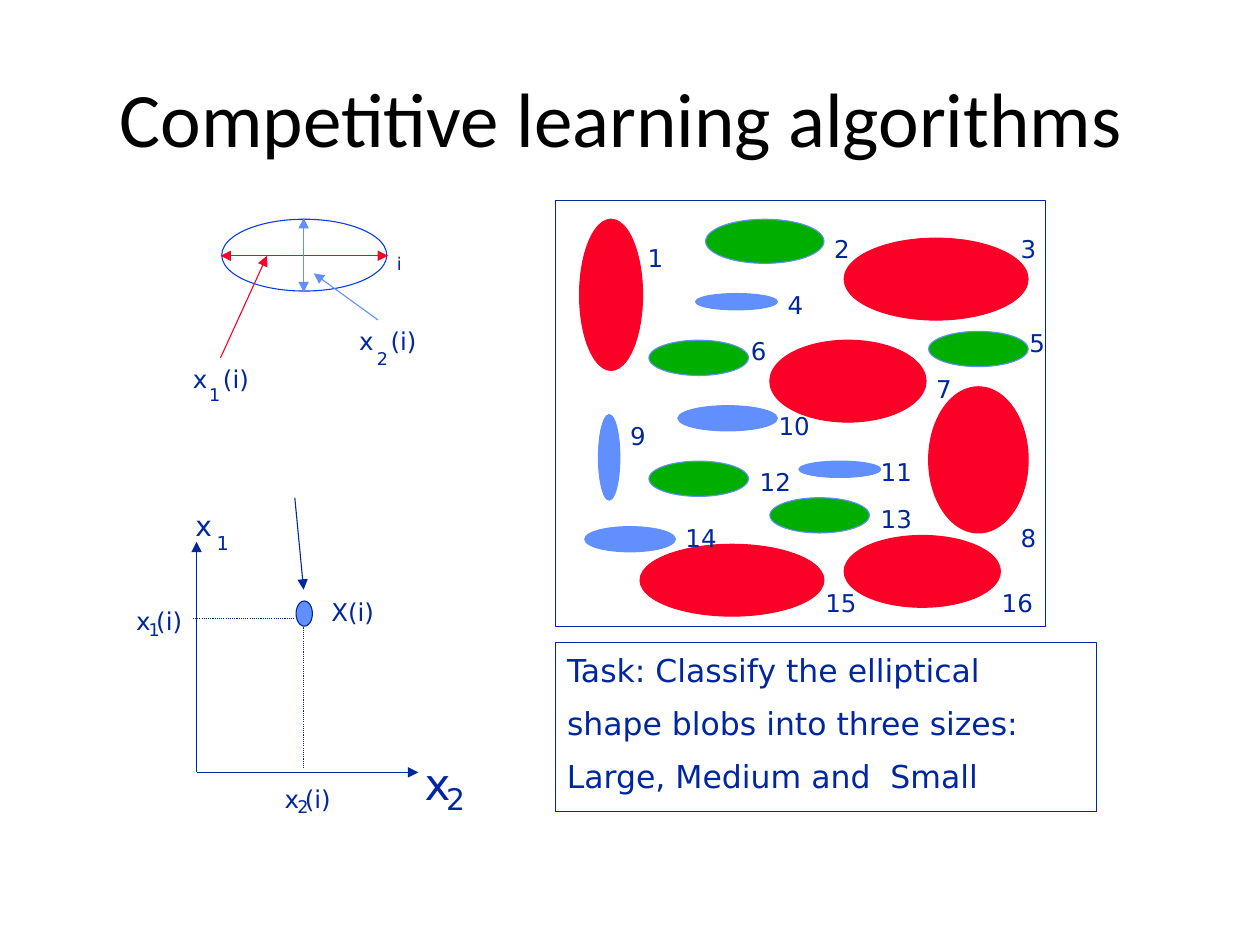
from dataclasses import dataclass

from lxml import etree
from pptx import Presentation
from pptx.dml.color import RGBColor
from pptx.enum.dml import MSO_LINE
from pptx.enum.shapes import MSO_CONNECTOR, MSO_SHAPE
from pptx.enum.text import MSO_ANCHOR, MSO_AUTO_SIZE, PP_ALIGN
from pptx.oxml.ns import qn
from pptx.util import Inches, Pt

OVAL = MSO_SHAPE.OVAL
RECTANGLE = MSO_SHAPE.RECTANGLE
STRAIGHT = MSO_CONNECTOR.STRAIGHT
DOTTED = MSO_LINE.ROUND_DOT
CENTER = PP_ALIGN.CENTER
MIDDLE = MSO_ANCHOR.MIDDLE
GROW = MSO_AUTO_SIZE.SHAPE_TO_FIT_TEXT


@dataclass(frozen=True)
class Theme:
    black: RGBColor = RGBColor(0x00, 0x00, 0x00)
    navy: RGBColor = RGBColor(0x00, 0x27, 0x9F)
    outline: RGBColor = RGBColor(0x06, 0x3D, 0xE8)
    red: RGBColor = RGBColor(0xFC, 0x01, 0x28)
    green: RGBColor = RGBColor(0x00, 0xAE, 0x00)
    blue: RGBColor = RGBColor(0x61, 0x8F, 0xFD)
    title_font: str = "Calibri"
    body_font: str = "DejaVu Sans"
    title: int = 44
    task: int = 18
    label: int = 14
    subscript: int = 10
    line: float = 0.63


theme = Theme()
prs = Presentation()
prs.slide_width, prs.slide_height = Inches(10), Inches(7.5)
slide = prs.slides.add_slide(prs.slide_layouts[5])


def add_outline(kind, box, fill, line):
    shape = slide.shapes.add_shape(kind, *map(Inches, box))
    shape.shadow.inherit = False
    if fill is None:
        shape.fill.background()
    else:
        shape.fill.solid()
        shape.fill.fore_color.rgb = fill
    shape.line.color.rgb = line
    shape.line.width = Pt(theme.line)


def add_label(text, left, top, width, height, size):
    frame = slide.shapes.add_textbox(*map(Inches, (left, top, width, height))).text_frame
    frame.margin_left = frame.margin_right = frame.margin_top = frame.margin_bottom = 0
    frame.word_wrap = False
    frame.auto_size = GROW
    paragraph = frame.paragraphs[0]
    paragraph.text = text
    paragraph.space_before = Pt(size * 0.2)
    paragraph.font.name = theme.body_font
    paragraph.font.size = Pt(size)
    paragraph.font.color.rgb = theme.navy


title = slide.shapes.title
title.left, title.top, title.width, title.height = map(Inches, (0.5, 0.3, 9, 1.25))
title.text_frame.vertical_anchor = MIDDLE
heading = title.text_frame.paragraphs[0]
heading.text = "Competitive learning algorithms "
heading.alignment = CENTER
heading.font.name = theme.title_font
heading.font.size = Pt(theme.title)
heading.font.color.rgb = theme.black

blob_groups = [
    (theme.green, theme.blue, [
        (5.6, 1.74, 0.94, 0.35), (5.15, 2.7, 0.79, 0.28), (5.15, 3.66, 0.79, 0.28),
        (7.37, 2.63, 0.79, 0.28), (6.11, 3.95, 0.79, 0.28),
    ]),
    (theme.blue, theme.blue, [
        (6.34, 3.66, 0.65, 0.13), (4.64, 4.18, 0.72, 0.2), (4.75, 3.29, 0.17, 0.68),
        (5.38, 3.22, 0.79, 0.2), (5.52, 2.33, 0.65, 0.13),
    ]),
    (theme.red, theme.red, [
        (4.6, 1.74, 0.5, 1.2), (6.7, 4.25, 1.24, 0.57), (6.7, 1.89, 1.46, 0.65),
        (5.08, 4.32, 1.46, 0.57), (6.11, 2.7, 1.24, 0.65), (7.37, 3.07, 0.79, 1.16),
    ]),
]
for fill, line, blobs in blob_groups:
    for blob in blobs:
        add_outline(OVAL, blob, fill, line)

add_outline(RECTANGLE, (4.41, 1.59, 3.89, 3.38), None, theme.navy)
add_outline(RECTANGLE, (4.41, 5.1, 4.29, 1.34), None, theme.navy)

task_lines = [
    ("Task: Classify the elliptical", 3.45),
    ("shape blobs into three sizes:", 3.75),
    ("Large, Medium and  Small", 3.33),
]
for row, (text, width) in enumerate(task_lines):
    add_label(text, 4.5, 5.17 + 0.42 * row, width, 0.3, theme.task)

number_positions = [
    (5.14, 1.93), (6.62, 1.86), (8.1, 1.86), (6.25, 2.3),
    (8.17, 2.6), (5.96, 2.67), (7.43, 2.97), (8.1, 4.15),
    (5, 3.34), (6.18, 3.26), (6.99, 3.63), (6.03, 3.71),
    (6.99, 4), (5.44, 4.15), (6.55, 4.67), (7.95, 4.67),
]
for number, (left, top) in enumerate(number_positions, start=1):
    add_label(str(number), left, top, 0.18 if number < 10 else 0.27, 0.27, theme.label)

add_outline(OVAL, (1.76, 1.74, 1.31, 0.57), None, theme.outline)
add_outline(OVAL, (2.35, 4.77, 0.13, 0.2), theme.blue, theme.navy)

diagram_lines = [
    ((1.75, 2.03), (3.08, 2.03), theme.red, ("headEnd", "tailEnd"), None),
    ((2.41, 1.73), (2.41, 2.32), theme.blue, ("headEnd", "tailEnd"), None),
    ((1.75, 2.84), (2.12, 2.03), theme.red, ("tailEnd",), None),
    ((3, 2.54), (2.49, 2.17), theme.blue, ("tailEnd",), None),
    ((1.56, 6.13), (1.56, 4.3), theme.navy, ("tailEnd",), None),
    ((1.56, 6.13), (3.32, 6.13), theme.navy, ("tailEnd",), None),
    ((2.34, 3.95), (2.41, 4.68), theme.navy, ("tailEnd",), None),
    ((1.53, 4.91), (2.34, 4.91), theme.navy, (), DOTTED),
    ((2.41, 4.98), (2.41, 6.09), theme.navy, (), DOTTED),
]
for start, end, color, arrowheads, dash in diagram_lines:
    connector = slide.shapes.add_connector(STRAIGHT, *map(Inches, start + end))
    connector.line.color.rgb = color
    connector.line.width = Pt(theme.line)
    if dash:
        connector.line.dash_style = dash
    properties = connector.element.spPr
    for arrowhead in arrowheads:
        etree.SubElement(properties.find(qn("a:ln")), qn(f"a:{arrowhead}"), type="triangle")
    etree.SubElement(properties, qn("a:effectLst"))

diagram_labels = [
    ("x", 2.85, 2.59, 0.12, 0.24, theme.label),
    ("2", 2.99, 2.76, 0.09, 0.17, theme.subscript),
    ("(i)", 3.1, 2.59, 0.23, 0.24, theme.label),
    ("x", 1.53, 2.89, 0.12, 0.24, theme.label),
    ("1", 1.66, 3.05, 0.09, 0.17, theme.subscript),
    ("(i)", 1.77, 2.89, 0.23, 0.24, theme.label),
    ("i", 3.15, 2.01, 0.04, 0.17, theme.subscript),
    ("x", 1.55, 4.04, 0.13, 0.27, 16),
    ("1", 1.72, 4.22, 0.1, 0.19, 11),
    ("x", 3.37, 6.01, 0.31, 0.48, 25),
    ("2", 3.54, 6.2, 0.21, 0.32, 17),
    ("X(i)", 2.63, 4.74, 0.4, 0.27, theme.label),
]
for label in diagram_labels:
    add_label(*label)

for subscript, left, top in [("2", 2.26, 6.22), ("1", 1.08, 4.81)]:
    add_label("x", left, top, 0.18, 0.27, theme.label)
    add_label(subscript, left + 0.1, top + 0.1, 0.13, 0.19, theme.subscript)
    add_label("(i)", left + 0.16, top, 0.26, 0.27, theme.label)

prs.save("out.pptx")
